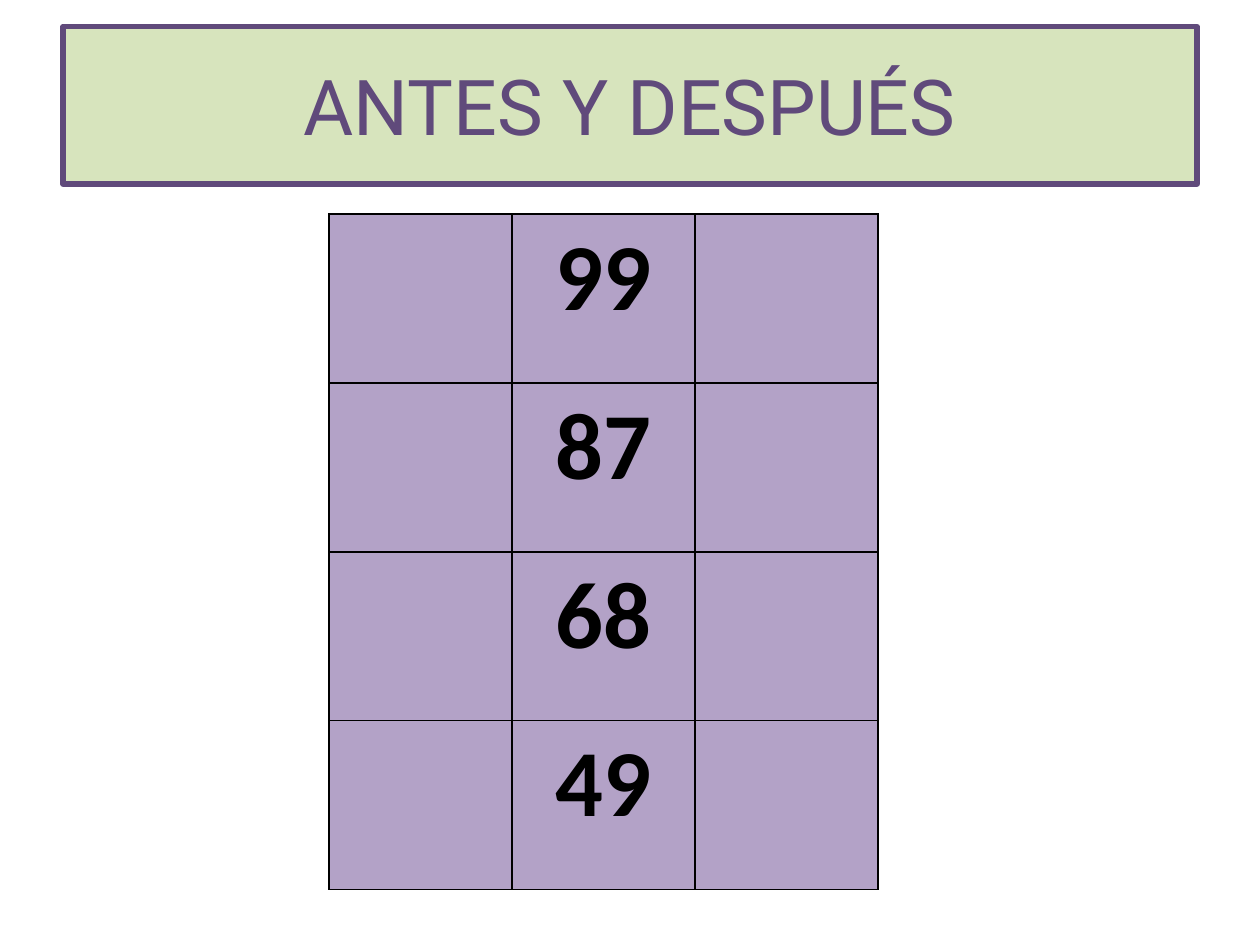
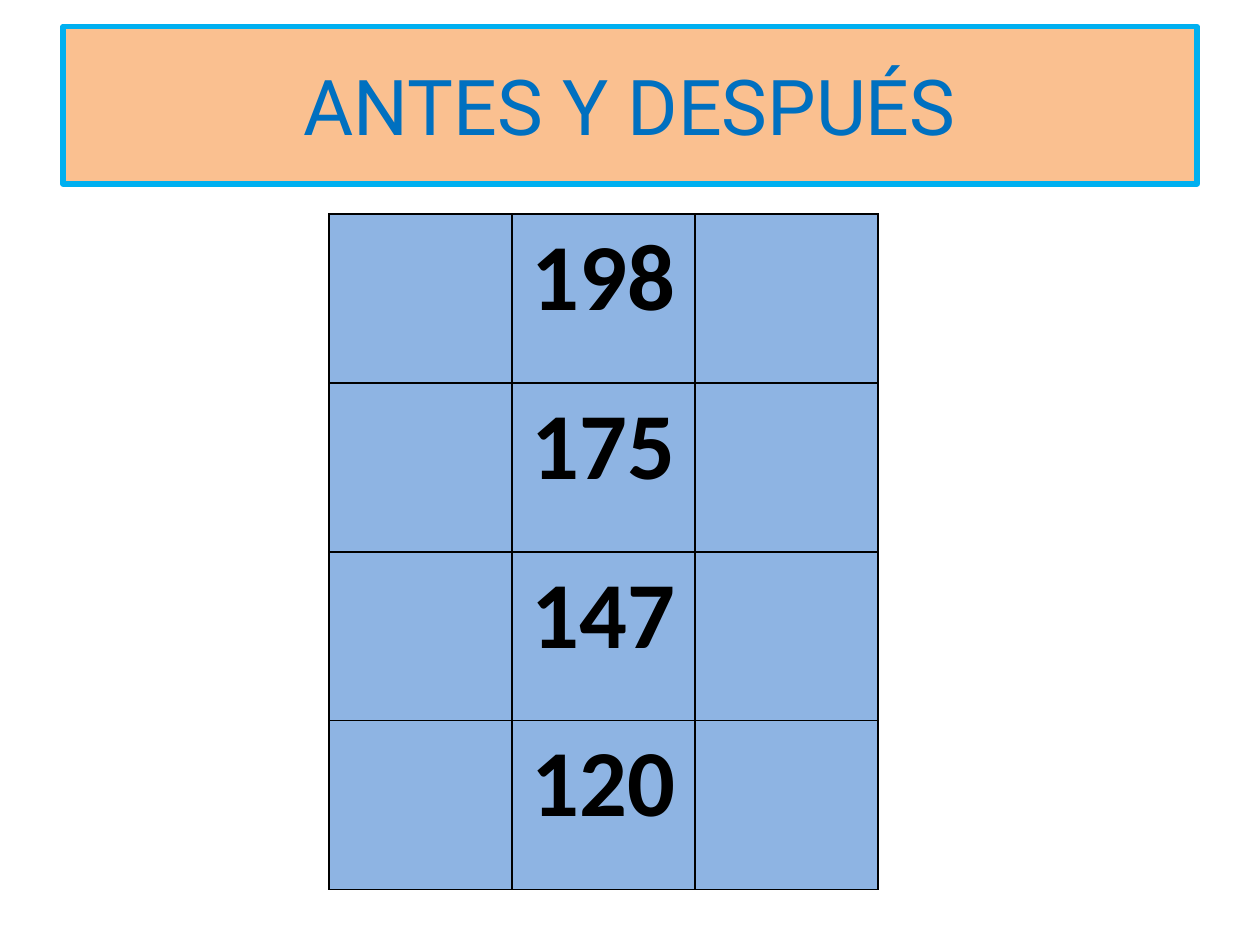
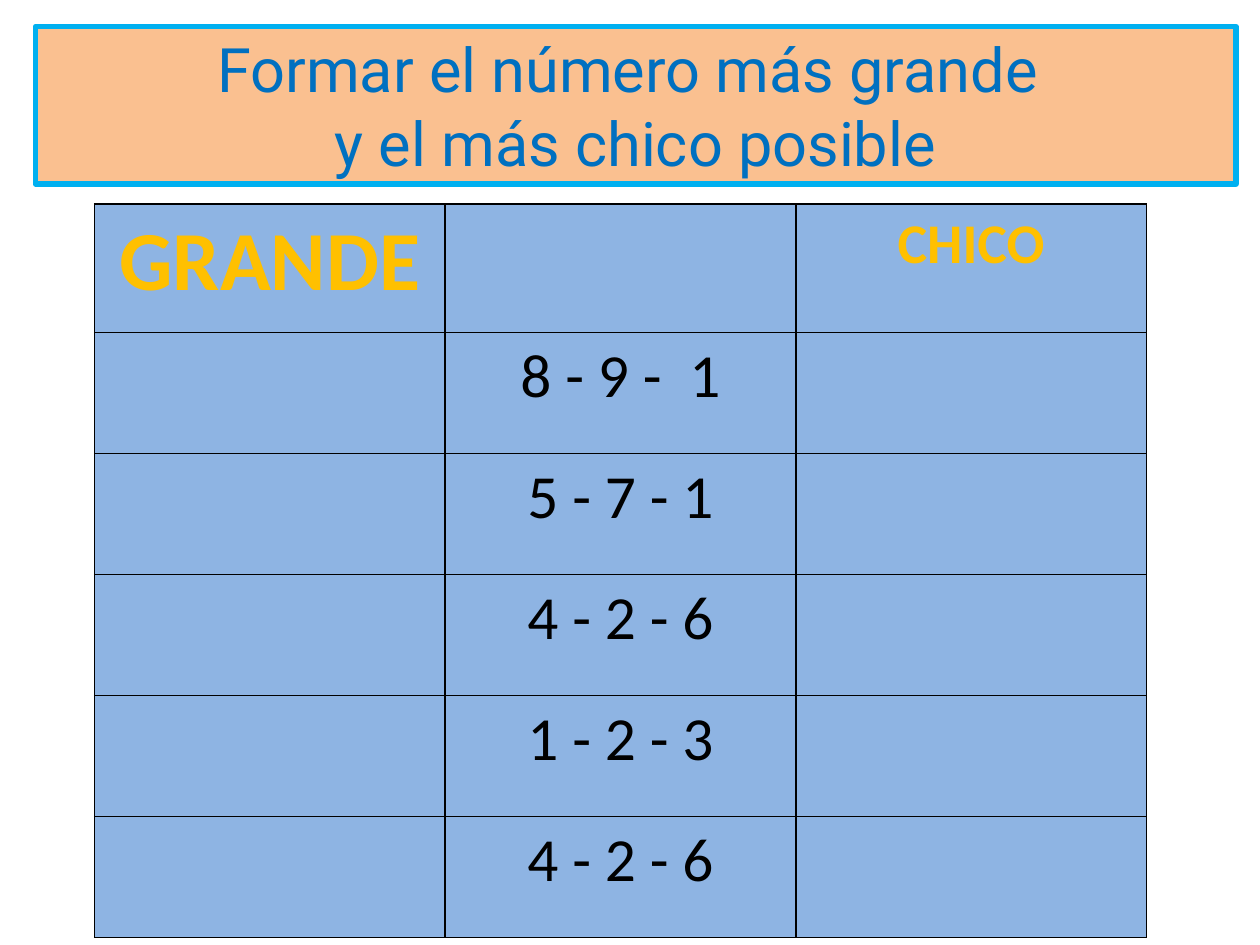
import pptx
import pptx.dml.color
import pptx.enum.text
import pptx.oxml.ns
import pptx.util
from lxml import etree

Inches = pptx.util.Inches
Pt = pptx.util.Pt

# Shared look
TITLE_FONT, NUMBER_FONT = "Roboto", "Calibri"
BLACK, AMBER = "000000", "FFC000"
VIOLET = {"band": "D7E4BD", "border": "604A7B", "title": "604A7B", "cell": "B3A2C7"}
BLUE = {"band": "FAC090", "border": "00B0F0", "title": "0070C0", "cell": "8EB4E3"}
COLUMNS = 3
TITLE_TOP, TITLE_HEIGHT = 0.21, 1.25


def color(hex_code):
    return pptx.dml.color.RGBColor.from_string(hex_code)


def paint(target, hex_code):
    target.fill.solid()
    target.fill.fore_color.rgb = color(hex_code)


def solid_line(tag, width, hex_code):
    """Build a line element for a cell border or a letter outline."""
    line = etree.Element(pptx.oxml.ns.qn(tag), w=str(Pt(width)))
    fill = etree.SubElement(line, pptx.oxml.ns.qn("a:solidFill"))
    etree.SubElement(fill, pptx.oxml.ns.qn("a:srgbClr"), val=hex_code)
    return line


def write(frame, text, font=NUMBER_FONT, size=35, ink=BLACK, bold=False, outline=False):
    frame.text = text
    for paragraph in frame.paragraphs:
        paragraph.alignment = pptx.enum.text.PP_ALIGN.CENTER
        for run in paragraph.runs:
            run.font.name = font
            run.font.size = Pt(size)
            run.font.bold = bold
            run.font.color.rgb = color(ink)
            if outline:
                run.font._element.insert(0, solid_line("a:ln", 0.75, BLACK))


def add_title_band(slide, text, theme, left=0.5, width=9, size=44):
    band = slide.shapes.title
    band.left, band.top = Inches(left), Inches(TITLE_TOP)
    band.width, band.height = Inches(width), Inches(TITLE_HEIGHT)
    paint(band, theme["band"])
    band.line.color.rgb = color(theme["border"])
    band.line.width = Pt(3)
    frame = band.text_frame
    frame.word_wrap = True
    frame.auto_size = pptx.enum.text.MSO_AUTO_SIZE.NONE
    frame.vertical_anchor = pptx.enum.text.MSO_ANCHOR.MIDDLE
    write(frame, text, font=TITLE_FONT, size=size, ink=theme["title"], outline=True)


def add_grid(slide, box, row_heights, theme):
    """Add an empty ruled grid with equal columns, filled in the theme's colour."""
    left, top, width = box
    frame = slide.shapes.add_table(
        len(row_heights), COLUMNS, Inches(left), Inches(top),
        Inches(width), Inches(sum(row_heights)))
    grid = frame.table
    grid.first_row = grid.horz_banding = False
    for column in grid.columns:
        column.width = Inches(width / COLUMNS)
    for row, height in zip(grid.rows, row_heights):
        row.height = Inches(height)
    for cell in grid.iter_cells():
        properties = cell._tc.get_or_add_tcPr()
        for side in ("a:lnL", "a:lnR", "a:lnT", "a:lnB"):
            properties.append(solid_line(side, 1, BLACK))
        paint(cell, theme["cell"])
    return grid


def new_slide(deck):
    return deck.slides.add_slide(deck.slide_layouts[5])


def build_before_after(deck, numbers, theme):
    slide = new_slide(deck)
    add_title_band(slide, "ANTES Y DESPUÉS", theme)
    grid = add_grid(slide, (2.61, 1.7, 4.36), [1.34] * len(numbers), theme)
    for row, number in enumerate(numbers):
        write(grid.cell(row, 1).text_frame, number, size=54, bold=True)


def build_largest_smallest(deck, digit_sets, theme):
    slide = new_slide(deck)
    add_title_band(slide, "Formar el número más grande \vy el más chico posible",
                   theme, left=0.28, width=9.53, size=35)
    grid = add_grid(slide, (0.75, 1.62, 8.35), [1.02] + [0.96] * len(digit_sets), theme)
    # Column headings on both sides of the digits
    for column, heading, size in ((0, "GRANDE", 48), (2, "CHICO", 32)):
        write(grid.cell(0, column).text_frame, heading, size=size, ink=AMBER,
              bold=True, outline=True)
    for row, digits in enumerate(digit_sets, start=1):
        write(grid.cell(row, 1).text_frame, digits)


def main():
    deck = pptx.Presentation()
    deck.slide_width, deck.slide_height = Inches(10), Inches(7.5)
    build_before_after(deck, ["99", "87", "68", "49"], VIOLET)
    build_before_after(deck, ["198", "175", "147", "120"], BLUE)
    build_largest_smallest(
        deck, ["8 - 9 -  1", "5 - 7 - 1", "4 - 2 - 6", "1 - 2 - 3", "4 - 2 - 6"], BLUE)
    deck.save("out.pptx")


if __name__ == "__main__":
    main()
